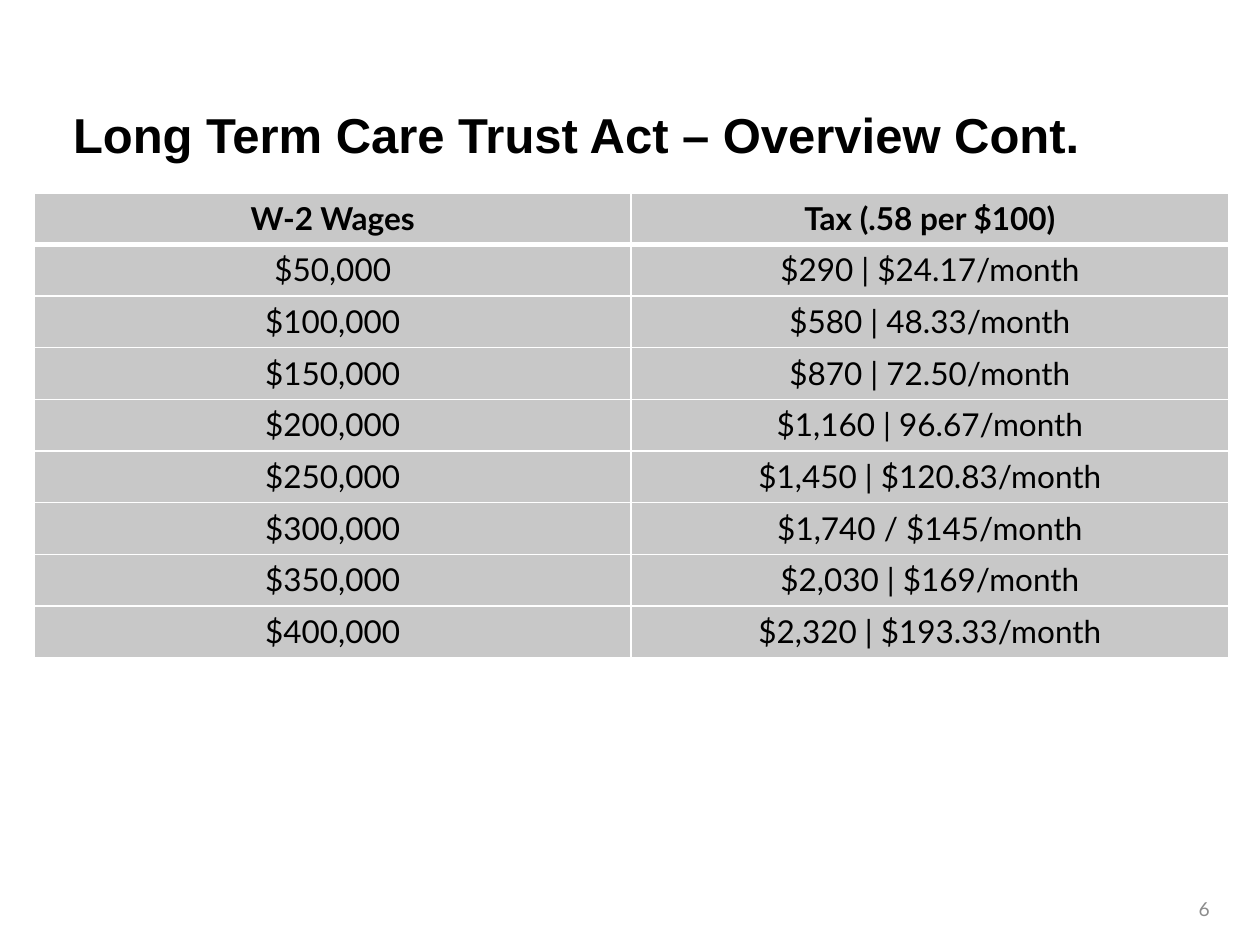
from pptx import Presentation
from pptx.dml.color import RGBColor
from pptx.enum.text import MSO_ANCHOR, PP_ALIGN
from pptx.oxml import parse_xml
from pptx.oxml.ns import nsdecls
from pptx.util import Inches, Pt

WAGE_TAXES = [
    ("W-2 Wages", "Tax (.58 per $100)"),
    ("$50,000", "$290 | $24.17/month"),
    ("$100,000", "$580 | 48.33/month"),
    ("$150,000", "$870 | 72.50/month"),
    ("$200,000", "$1,160 | 96.67/month"),
    ("$250,000", "$1,450 | $120.83/month"),
    ("$300,000", "$1,740 / $145/month"),
    ("$350,000", "$2,030 | $169/month"),
    ("$400,000", "$2,320 | $193.33/month"),
]


def color(hex_string):
    return RGBColor.from_string(hex_string)


class SlideBuilder:
    title_font = "Arial"
    body_font = "Lato"
    text_color = "000000"
    muted_color = "8C8C8C"
    cell_color = "C8C8C8"
    border_color = "FFFFFF"

    def __init__(self, slide):
        self.slide = slide

    def format_text(self, paragraph, font_name, size, hex_string, bold, alignment):
        paragraph.alignment = alignment
        for run in paragraph.runs:
            run.font.name = font_name
            run.font.size = Pt(size)
            run.font.bold = bold
            run.font.color.rgb = color(hex_string)

    def set_frame(self, text_frame, left, top, right, bottom):
        text_frame.word_wrap = True
        text_frame.vertical_anchor = MSO_ANCHOR.MIDDLE
        text_frame.margin_left, text_frame.margin_top = Inches(left), Inches(top)
        text_frame.margin_right, text_frame.margin_bottom = Inches(right), Inches(bottom)

    def add_title(self, text, left, top, width, height):
        title = self.slide.shapes.title
        title.left, title.top = Inches(left), Inches(top)
        title.width, title.height = Inches(width), Inches(height)
        title.text_frame.text = text
        self.set_frame(title.text_frame, 0.31, 0, 0, 0.1)
        self.format_text(title.text_frame.paragraphs[0], self.title_font, 28,
                         self.text_color, True, PP_ALIGN.LEFT)

    def set_borders(self, cell, top, bottom):
        """Draw the four cell borders; top and bottom are widths in points."""
        properties = cell._tc.get_or_add_tcPr()
        widths = {"lnL": 1, "lnR": 1, "lnT": top, "lnB": bottom}
        for position, (tag, width) in enumerate(widths.items()):
            properties.insert(position, parse_xml(
                f'<a:{tag} {nsdecls("a")} w="{Pt(width)}"><a:solidFill>'
                f'<a:srgbClr val="{self.border_color}"/></a:solidFill></a:{tag}>'))

    def add_table(self, rows, left, top, width, row_height):
        table = self.slide.shapes.add_table(
            len(rows), len(rows[0]), Inches(left), Inches(top),
            Inches(width), Inches(row_height * len(rows))).table
        for row_index, values in enumerate(rows):
            is_header = row_index == 0
            for column_index, value in enumerate(values):
                cell = table.cell(row_index, column_index)
                cell.text_frame.text = value
                self.format_text(cell.text_frame.paragraphs[0], self.body_font, 18,
                                 self.text_color, is_header, PP_ALIGN.CENTER)
                cell.fill.solid()
                cell.fill.fore_color.rgb = color(self.cell_color)
                self.set_borders(cell, top=3 if row_index == 1 else 1,
                                 bottom=3 if is_header else 1)

    def add_page_number(self, text, left, top, width, height):
        text_box = self.slide.shapes.add_textbox(
            Inches(left), Inches(top), Inches(width), Inches(height))
        text_box.text_frame.text = text
        self.set_frame(text_box.text_frame, 0.1, 0.05, 0.1, 0.05)
        paragraph = text_box.text_frame.paragraphs[0]
        paragraph.space_after = Pt(6)
        self.format_text(paragraph, self.body_font, 11, self.muted_color,
                         False, PP_ALIGN.RIGHT)


def main():
    presentation = Presentation()
    presentation.slide_width = Inches(10)
    presentation.slide_height = Inches(7.5)
    title_only = presentation.slide_layouts[5]
    builder = SlideBuilder(presentation.slides.add_slide(title_only))
    builder.add_title("Long Term Care Trust Act – Overview Cont.", 0.27, 0.82, 9.08, 0.58)
    builder.add_table(WAGE_TAXES, 0.27, 1.53, 9.48, 0.41)
    builder.add_page_number("6", 9.31, 7.01, 0.39, 0.4)
    presentation.save("out.pptx")


if __name__ == "__main__":
    main()
